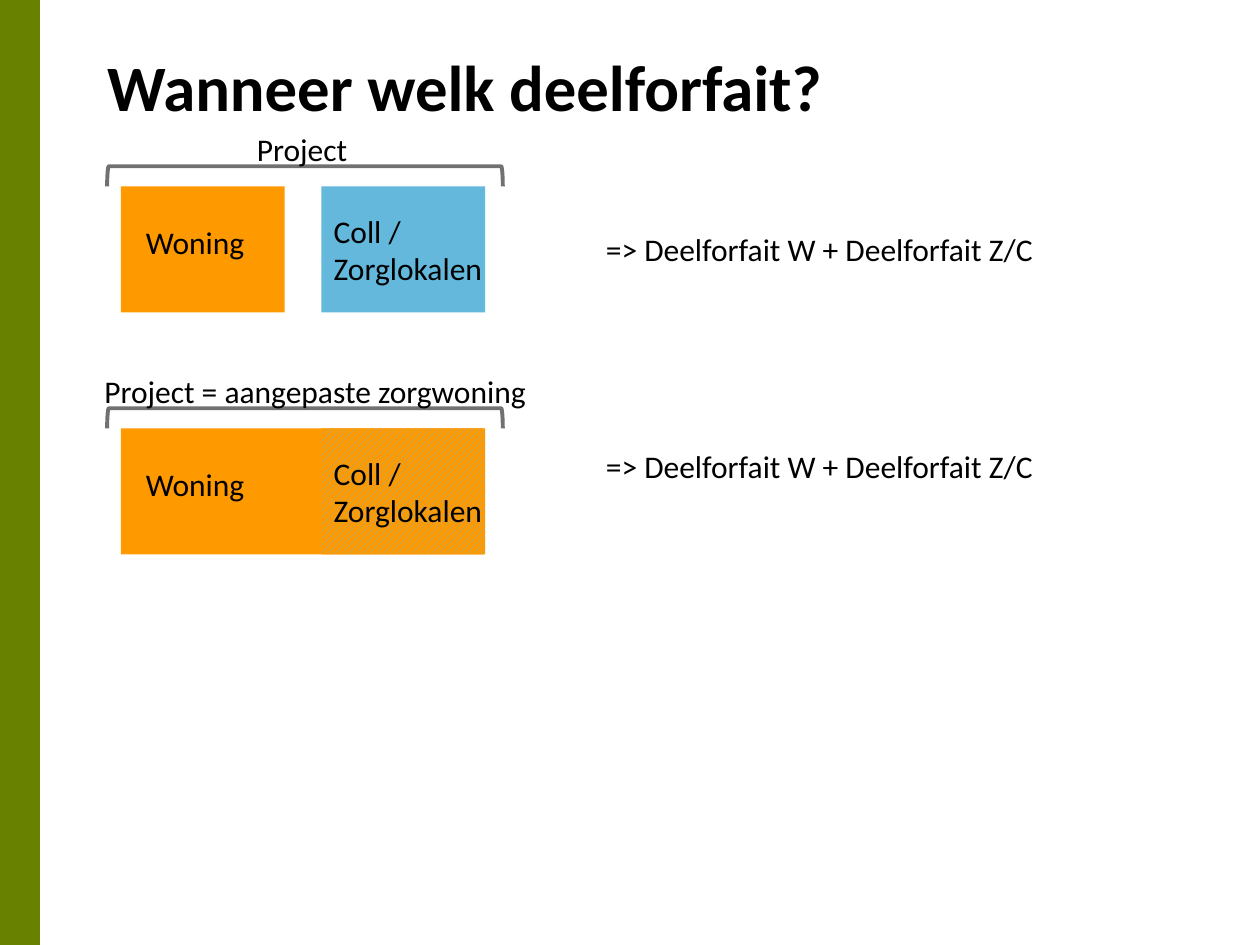
import pptx
import pptx.dml.color
import pptx.enum.dml
import pptx.enum.shapes
import pptx.enum.text
import pptx.util

Inches = pptx.util.Inches
SHAPES = pptx.enum.shapes.MSO_SHAPE
ORANGE = "FF9900"
BLUE = "63B8DC"
BODY = {"name": "Calibri", "size": pptx.util.Pt(18)}
HEADING = {"name": "Calibri", "size": pptx.util.Pt(37), "bold": True}


def paint(color_format, value):
    color_format.rgb = pptx.dml.color.RGBColor.from_string(value)


def add_block(slide, left, top, width, height, color, stripe=None, edge=None):
    block = slide.shapes.add_shape(
        SHAPES.RECTANGLE, Inches(left), Inches(top), Inches(width), Inches(height))
    block.shadow.inherit = False
    if stripe:
        block.fill.patterned()
        block.fill.pattern = pptx.enum.dml.MSO_PATTERN.WIDE_UPWARD_DIAGONAL
        paint(block.fill.fore_color, stripe)
        paint(block.fill.back_color, color)
    else:
        block.fill.solid()
        paint(block.fill.fore_color, color)
    if edge:
        paint(block.line.color, edge)
        block.line.width = pptx.util.Pt(1)
    else:
        block.line.fill.background()


def add_bracket(slide, top):
    bracket = slide.shapes.add_shape(
        SHAPES.LEFT_BRACKET, Inches(2.34), Inches(top - 1.65), Inches(0.16), Inches(3.14))
    bracket.rotation = 90
    bracket.shadow.inherit = False
    bracket.fill.background()
    paint(bracket.line.color, "717171")
    bracket.line.width = pptx.util.Pt(2.25)


def add_label(slide, text, left, top, width, height=0.4, style=BODY):
    label = slide.shapes.add_textbox(
        Inches(left), Inches(top), Inches(width), Inches(height))
    frame = label.text_frame
    frame.word_wrap = True
    paragraph = frame.paragraphs[0]
    run = paragraph.add_run()
    run.text = text
    for attribute, value in style.items():
        setattr(run.font, attribute, value)
    paint(run.font.color, "000000")
    return frame


def add_title(slide, text):
    frame = add_label(slide, text, 0.85, 0.46, 8.11, 0.54, HEADING)
    for side in ("left", "top", "right", "bottom"):
        setattr(frame, f"margin_{side}", 0)
    frame.vertical_anchor = pptx.enum.text.MSO_ANCHOR.TOP
    frame.paragraphs[0].line_spacing = pptx.util.Pt(38)


def add_project(slide, top, name, name_left, name_width, home_width,
                care_color, care_stripe, forfait_top):
    add_block(slide, 0.96, top, home_width, 1, ORANGE)
    add_block(slide, 2.55, top, 1.3, 1, care_color, care_stripe)
    add_bracket(slide, top)
    add_label(slide, name, name_left, top - 0.5, name_width)
    add_label(slide, "Woning", 1.06, top + 0.24, 1.09)
    add_label(slide, "Coll / Zorglokalen", 2.55, top + 0.15, 1.43, 0.71)
    add_label(slide, "=> Deelforfait W + Deelforfait Z/C", 4.71, forfait_top, 4.79)


def main():
    deck = pptx.Presentation()
    deck.slide_width = Inches(10)
    deck.slide_height = Inches(7.5)
    slide = deck.slides.add_slide(deck.slide_layouts[6])
    add_block(slide, 0, 0, 0.31, 7.5, "688200", edge="678100")
    add_title(slide, "Wanneer welk deelforfait?")
    add_project(slide, 1.48, "Project", 1.94, 0.96, 1.3, BLUE, None, 1.78)
    add_project(slide, 3.4, "Project = aangepaste zorgwoning", 0.73, 4.14, 2.88,
                ORANGE, BLUE, 3.5)
    deck.save("out.pptx")


if __name__ == "__main__":
    main()
